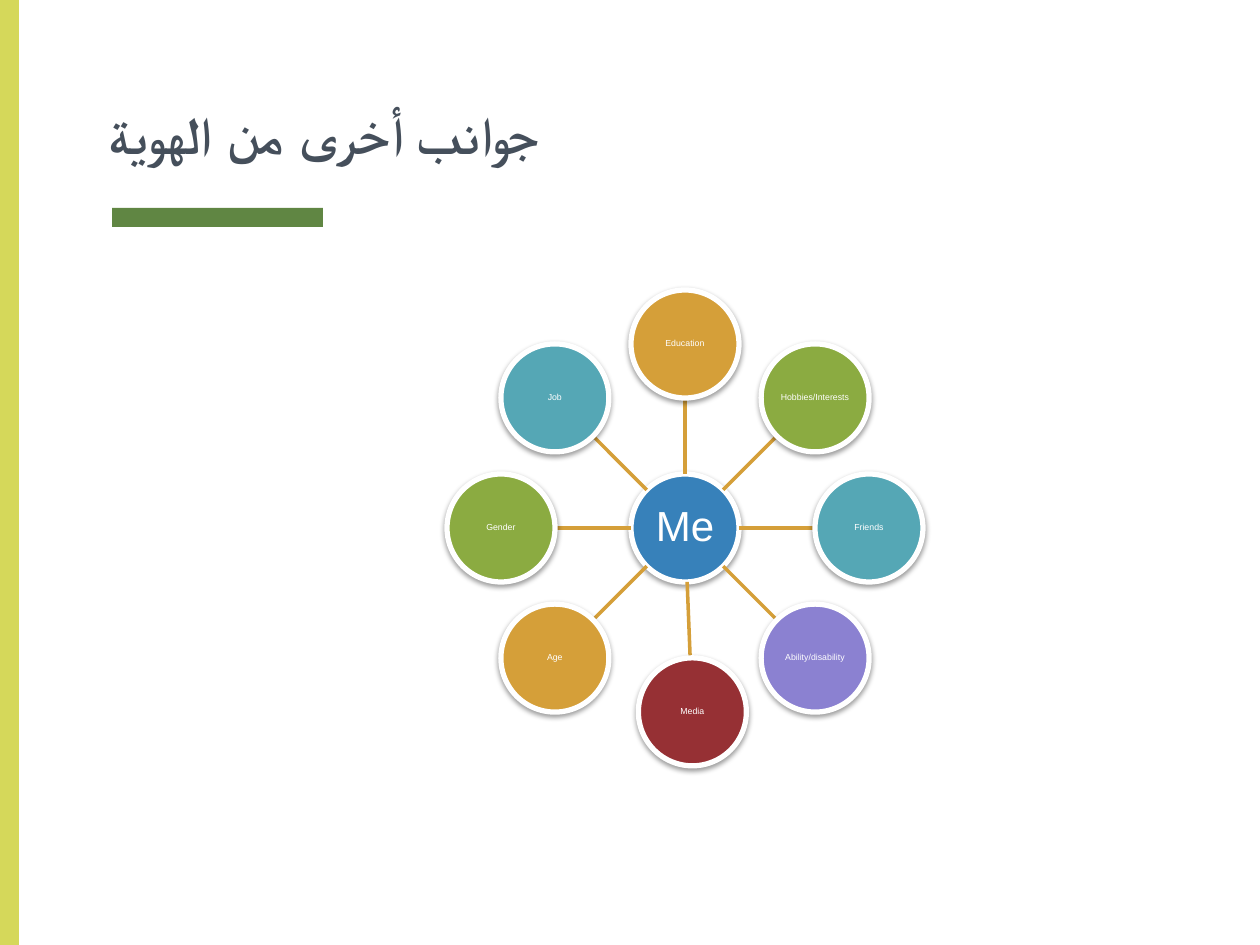
import math
import pptx
import pptx.dml.color
import pptx.enum.shapes
import pptx.enum.text
import pptx.util
import lxml.etree
import pptx.oxml.ns

PX = 914400 / 126
qn = pptx.oxml.ns.qn


def px(length):
    return pptx.util.Emu(round(length * PX))


def color(hex_value):
    return pptx.dml.color.RGBColor.from_string(hex_value)


deck = pptx.Presentation()
deck.slide_width, deck.slide_height = px(1260), px(945)
page = deck.slides.add_slide(deck.slide_layouts[5])

# Accent bars
for left, top, width, height, fill in [
    (112, 208, 211, 19, "608643"),
    (0, 0, 19, 945, "D5D85A"),
]:
    bar = page.shapes.add_shape(
        pptx.enum.shapes.MSO_SHAPE.RECTANGLE, px(left), px(top), px(width), px(height))
    bar.shadow.inherit = False
    bar.fill.solid()
    bar.fill.fore_color.rgb = color(fill)
    bar.line.fill.background()

# Title
title = page.shapes.title
title.left, title.top, title.width, title.height = px(96), px(0), px(1070), px(178)
frame = title.text_frame
frame.text = "جوانب أخرى من الهوية"
frame.word_wrap = True
frame.auto_size = pptx.enum.text.MSO_AUTO_SIZE.NONE
frame.vertical_anchor = pptx.enum.text.MSO_ANCHOR.BOTTOM
frame.margin_left = frame.margin_right = frame.margin_top = frame.margin_bottom = px(13)
para = frame.paragraphs[0]
para.alignment = pptx.enum.text.PP_ALIGN.LEFT
span = para.runs[0]
span.font.name = "Montserrat"
span.font.size = pptx.util.Pt(30)
span.font.bold = True
span.font.color.rgb = color("454F5B")
complex_font = lxml.etree.SubElement(span.font._element, qn("a:cs"))
complex_font.set("typeface", "Montserrat")

# Identity wheel: label, fill, distance from hub, angle clockwise from the right, text size
hub_x, hub_y = 685, 528
orbit, radius = 184, 54
circles = [
    ("Me", "3781BA", 0, 0, 24),
    ("Education", "D59F39", orbit, -90, 5),
    ("Hobbies/Interests", "8BAB41", orbit, -45, 5),
    ("Friends", "55A7B5", orbit, 0, 5),
    ("Ability/disability", "8B81D1", orbit, 45, 5),
    ("Media", "963034", orbit, 87.7, 5),
    ("Age", "D59F39", orbit, 135, 5),
    ("Gender", "8BAB41", orbit, 180, 5),
    ("Job", "55A7B5", orbit, 225, 5),
]
for label, fill, distance, angle, size in circles:
    across, down = math.cos(math.radians(angle)), math.sin(math.radians(angle))

    # Spoke from the hub's edge to the circle's edge
    if distance:
        inner, outer = radius, distance - radius
        spoke = page.shapes.add_connector(
            pptx.enum.shapes.MSO_CONNECTOR.STRAIGHT,
            px(hub_x + inner * across), px(hub_y + inner * down),
            px(hub_x + outer * across), px(hub_y + outer * down))
        spoke.line.color.rgb = color("D59F39")
        spoke.line.width = pptx.util.Pt(2)
        lxml.etree.SubElement(spoke._element.spPr, qn("a:effectLst"))

    # Circle with its label
    circle = page.shapes.add_shape(
        pptx.enum.shapes.MSO_SHAPE.OVAL,
        px(hub_x + distance * across - radius), px(hub_y + distance * down - radius),
        px(2 * radius), px(2 * radius))
    circle.fill.solid()
    circle.fill.fore_color.rgb = color(fill)
    circle.line.color.rgb = color("FFFFFF")
    circle.line.width = pptx.util.Pt(3)
    frame = circle.text_frame
    frame.text = label
    frame.word_wrap = True
    frame.vertical_anchor = pptx.enum.text.MSO_ANCHOR.MIDDLE
    frame.margin_left = frame.margin_right = frame.margin_top = frame.margin_bottom = 0
    para = frame.paragraphs[0]
    para.alignment = pptx.enum.text.PP_ALIGN.CENTER
    para.line_spacing = 0.9
    span = para.runs[0]
    span.font.name = "Arial"
    span.font.size = pptx.util.Pt(size)
    span.font.color.rgb = color("FFFFFF")

    # Soft shadow below the circle
    circle.shadow.inherit = False
    effects = circle._element.spPr.find(qn("a:effectLst"))
    shadow = lxml.etree.SubElement(
        effects, qn("a:outerShdw"), blurRad=str(pptx.util.Pt(3.1)),
        dist=str(pptx.util.Pt(1.6)), dir="5400000", rotWithShape="0")
    tint = lxml.etree.SubElement(shadow, qn("a:srgbClr"), val="000000")
    lxml.etree.SubElement(tint, qn("a:alpha"), val="38000")

deck.save("out.pptx")
